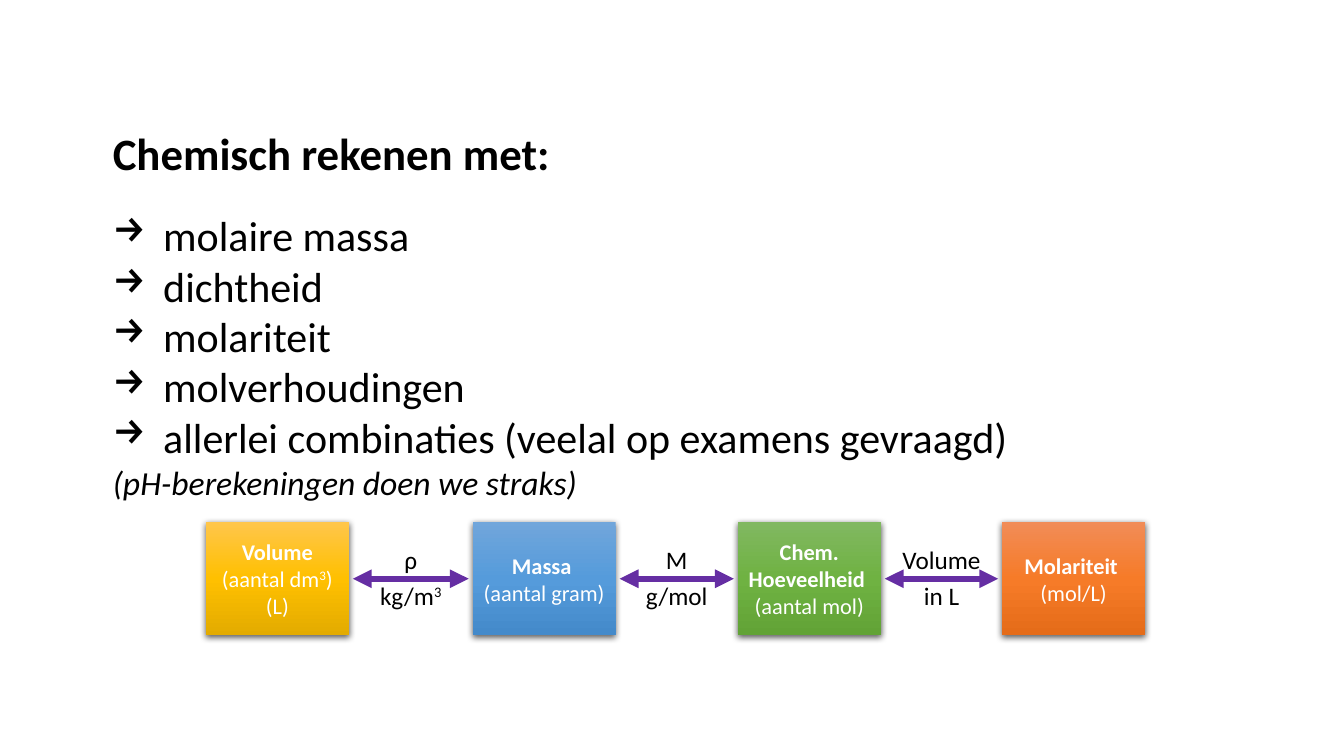
from lxml.etree import SubElement
from pptx import Presentation
from pptx.dml.color import RGBColor
from pptx.enum.shapes import MSO_CONNECTOR, MSO_SHAPE
from pptx.enum.text import MSO_ANCHOR, PP_ALIGN
from pptx.oxml import parse_xml
from pptx.oxml.ns import nsdecls, qn
from pptx.util import Pt

FONT, BLACK, WHITE, PURPLE = "Calibri", "000000", "FFFFFF", "652EA3"
TITLE = "Chemisch rekenen met:"
TOPICS = [
    "molaire massa",
    "dichtheid",
    "molariteit",
    "molverhoudingen",
    "allerlei combinaties (veelal op examens gevraagd)",
]
REMARK = "(pH-berekeningen doen we straks)"

# left, quantity, unit (text with ^ before a superscript digit), gradient
QUANTITIES = [
    (147, "Volume", "(aantal dm^3) (L)", ("FFC64B", "FFC000", "E3AB00")),
    (337.6, "Massa ", "(aantal gram)", ("71A6DB", "559BDB", "448ACA")),
    (527, "Chem. Hoeveelheid ", "(aantal mol)", ("81B861", "6FB242", "62A336")),
    (715.8, "Molariteit ", "(mol/L)", ("F18C57", "F67B28", "E56C19")),
]
# above the arrow, below the arrow
CONVERSIONS = [("ρ", "kg/m^3"), ("M", "g/mol"), ("Volume", "in L")]

BOX_TOP, BOX_WIDTH, BOX_HEIGHT = 373, 102.2, 80.8
ARROW_GAP = 2.8
LABEL_TOP, LABEL_HEIGHT = 385.5, 54.7


def rgb(colour):
    return RGBColor.from_string(colour)


def add_run(paragraph, text, size, colour=BLACK, bold=False, italic=False):
    run = paragraph.add_run()
    run.text = text
    font = run.font
    font.name, font.size, font.bold, font.italic = FONT, Pt(size), bold, italic
    font.color.rgb = rgb(colour)
    return run


def add_formula(paragraph, text, size, colour=BLACK):
    """Add text in which ^ raises the one character after it."""
    plain, *raised = text.split("^")
    add_run(paragraph, plain, size, colour)
    for part in raised:
        exponent = add_run(paragraph, part[0], size, colour)
        exponent.font._element.set("baseline", "30000")
        if part[1:]:
            add_run(paragraph, part[1:], size, colour)


def add_text_frame(left, top, width, height, wrap=True):
    box = slide.shapes.add_textbox(Pt(left), Pt(top), Pt(width), Pt(height))
    box.text_frame.word_wrap = wrap
    return box.text_frame


def next_paragraph(frame, first):
    return frame.paragraphs[0] if first else frame.add_paragraph()


def set_arrow_bullet(paragraph):
    properties = paragraph._p.get_or_add_pPr()
    properties.set("marL", str(Pt(36)))
    properties.set("indent", str(-Pt(36)))
    SubElement(properties, qn("a:buChar")).set("char", "→")


def shade(shape, colours):
    """Give a shape a vertical three-stop gradient and a soft drop shadow."""
    stops = "".join(
        f'<a:gs pos="{index * 50000}"><a:srgbClr val="{colour}"/></a:gs>'
        for index, colour in enumerate(colours)
    )
    shape.line.fill.background()
    properties = shape._element.spPr
    properties.find(qn("a:ln")).addprevious(parse_xml(
        f'<a:gradFill {nsdecls("a")} rotWithShape="1"><a:gsLst>{stops}</a:gsLst>'
        '<a:lin ang="5400000" scaled="0"/></a:gradFill>'))
    properties.append(parse_xml(
        f'<a:effectLst {nsdecls("a")}><a:outerShdw blurRad="{Pt(4.5)}" dist="{Pt(1.5)}" '
        'dir="5400000" algn="ctr" rotWithShape="0"><a:srgbClr val="000000">'
        '<a:alpha val="63000"/></a:srgbClr></a:outerShdw></a:effectLst>'))


def add_quantity(left, quantity, unit, colours):
    box = slide.shapes.add_shape(
        MSO_SHAPE.RECTANGLE, Pt(left), Pt(BOX_TOP), Pt(BOX_WIDTH), Pt(BOX_HEIGHT))
    shade(box, colours)
    frame = box.text_frame
    frame.word_wrap = True
    frame.vertical_anchor = MSO_ANCHOR.MIDDLE
    heading, detail = frame.paragraphs[0], frame.add_paragraph()
    heading.alignment = detail.alignment = PP_ALIGN.CENTER
    add_run(heading, quantity, 16, WHITE, bold=True)
    add_formula(detail, unit, 16, WHITE)


def add_conversion(start, end, above, below):
    middle = Pt(BOX_TOP + BOX_HEIGHT / 2)
    arrow = slide.shapes.add_connector(
        MSO_CONNECTOR.STRAIGHT, Pt(start + ARROW_GAP), middle, Pt(end - ARROW_GAP), middle)
    arrow.line.color.rgb = rgb(PURPLE)
    arrow.line.width = Pt(4.5)
    for tip in ("a:headEnd", "a:tailEnd"):
        SubElement(arrow.line._get_or_add_ln(), qn(tip)).set("type", "triangle")
    SubElement(arrow._element.spPr, qn("a:effectLst"))

    label = add_text_frame(start, LABEL_TOP, end - start, LABEL_HEIGHT, wrap=False)
    for index, text in enumerate((above, below)):
        line = next_paragraph(label, index == 0)
        line.alignment = PP_ALIGN.CENTER
        if index:
            line.space_before = Pt(3.6)
        add_formula(line, text, 18)


presentation = Presentation()
presentation.slide_width, presentation.slide_height = Pt(960), Pt(540)
slide = presentation.slides.add_slide(presentation.slide_layouts[6])

title = add_text_frame(73.5, 86.4, 564.5, 75)
add_run(title.paragraphs[0], TITLE, 32, bold=True)

topics = add_text_frame(73.5, 146.2, 690.5, 218.2)
for index, topic in enumerate(TOPICS):
    item = next_paragraph(topics, index == 0)
    set_arrow_bullet(item)
    add_run(item, topic, 30)
add_run(topics.add_paragraph(), REMARK, 24, italic=True)

for quantity in QUANTITIES:
    add_quantity(*quantity)
for here, there, conversion in zip(QUANTITIES, QUANTITIES[1:], CONVERSIONS):
    add_conversion(here[0] + BOX_WIDTH, there[0], *conversion)

presentation.save("out.pptx")
